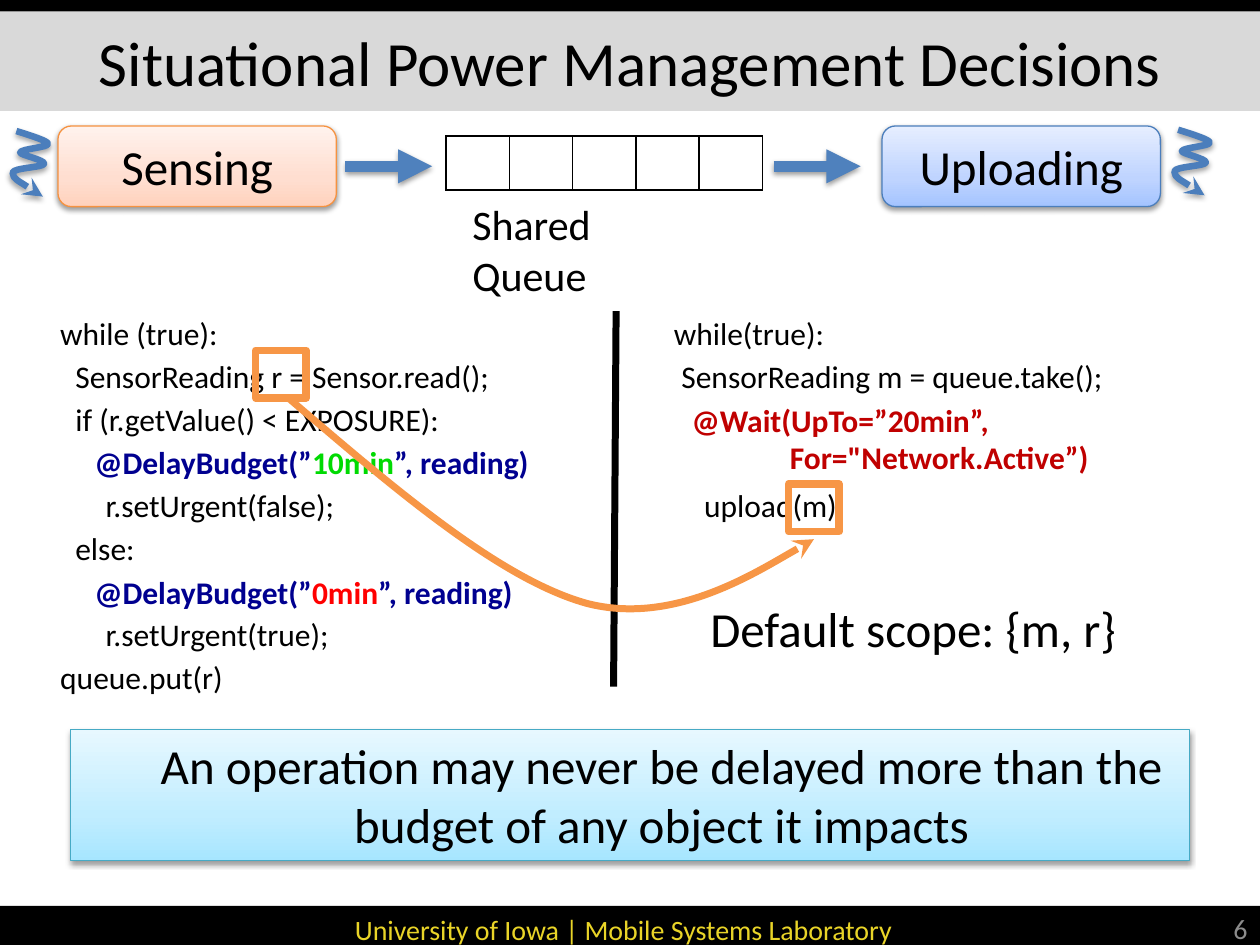
"""Builds the slide on situational power management decisions."""
from copy import deepcopy

from lxml.etree import SubElement
from pptx import Presentation
from pptx.dml.color import RGBColor
from pptx.enum.shapes import MSO_CONNECTOR, MSO_SHAPE as SHAPE
from pptx.enum.text import MSO_ANCHOR as ANCHOR, MSO_AUTO_SIZE, PP_ALIGN as ALIGN
from pptx.oxml.ns import qn
from pptx.util import Inches, Pt

BLACK = RGBColor(0x00, 0x00, 0x00)
WHITE = RGBColor(0xFF, 0xFF, 0xFF)
LIGHT_GRAY = RGBColor(0xD9, 0xD9, 0xD9)
MID_GRAY = RGBColor(0x8C, 0x8C, 0x8C)
YELLOW = RGBColor(0xE9, 0xD4, 0x28)
NAVY = RGBColor(0x00, 0x00, 0x90)
GREEN = RGBColor(0x00, 0xDA, 0x02)
RED = RGBColor(0xFF, 0x00, 0x00)
DARK_RED = RGBColor(0xC0, 0x00, 0x00)
BLUE = RGBColor(0x4F, 0x81, 0xBD)
DEEP_BLUE = RGBColor(0x4B, 0x7E, 0xBC)
ORANGE = RGBColor(0xF7, 0x96, 0x46)
ORANGE_EDGE = RGBColor(0xF6, 0x92, 0x40)
TEAL_EDGE = RGBColor(0x46, 0xAA, 0xC5)
PEACH = [RGBColor(0xFF, 0xD2, 0xBD), RGBColor(0xFF, 0xDE, 0xD0), RGBColor(0xFF, 0xF2, 0xED)]
PERIWINKLE = [RGBColor(0xA4, 0xC4, 0xFF), RGBColor(0xBF, 0xD4, 0xFF), RGBColor(0xE6, 0xEE, 0xFF)]
SKY = [RGBColor(0xA7, 0xE6, 0xFF), RGBColor(0xC1, 0xED, 0xFF), RGBColor(0xE7, 0xF8, 0xFF)]

FONT = "Calibri"
SPACE_WIDTH = 0.06
CODE_LINE = 24.5
STOPS = (0, 0.35, 1)

TITLE = "Situational Power Management Decisions"
FOOTER = "University of Iowa | Mobile Systems Laboratory"
RULE = "An operation may never be delayed more than the budget of any object it impacts"
STAGES = [("Sensing", 0.46, PEACH, ORANGE_EDGE), ("Uploading", 7, PERIWINKLE, DEEP_BLUE)]
QUEUE_SLOTS = 5
FLOW_ARROWS = [2.74, 6.14]
# code line, indent in characters, annotation lines above it
SENSING_CODE = [
    ("while (true):", 0, 0),
    ("SensorReading r = Sensor.read();", 2, 0),
    ("if (r.getValue() < EXPOSURE):", 2, 0),
    ("r.setUrgent(false);", 6, 1),
    ("else:", 2, 0),
    ("r.setUrgent(true);", 6, 1),
    ("queue.put(r)", 0, 0),
]
UPLOADING_CODE = [
    ("while(true):", 0, 0),
    ("SensorReading m = queue.take();", 1, 0),
    ("upload(m)", 4, 2),
]
WAIT = [("@Wait(UpTo=”20min”,", 0), ("For=\"Network.Active”)", 13)]
BUDGETS = [("10min", GREEN, 3.47), ("0min", RED, 4.5)]
HIGHLIGHTS = [(6.26, 3.84), (2.03, 2.78)]
SQUIGGLE = [(0.13, 1.04), (0.26, 1.08), (0.38, 1.12), (0.38, 1.14),
            (0.39, 1.17), (0.17, 1.18), (0.16, 1.21),
            (0.16, 1.23), (0.36, 1.27), (0.35, 1.3),
            (0.34, 1.33), (0.11, 1.33), (0.1, 1.37),
            (0.1, 1.42), (0.34, 1.56), (0.34, 1.56)]
SQUIGGLE_SHIFTS = [(0, 0), (9.22, -0.01)]
OBJECT_FLOW = [(2.29, 3.16), (3.13, 3.88), (3.97, 4.6), (4.66, 4.79),
               (5.36, 4.97), (6.46, 4.28), (6.46, 4.28)]


def write(shape, paragraphs, size=18, color=BLACK, bold=False, align=ALIGN.LEFT,
          anchor=ANCHOR.TOP, wrap=True, after=0, right=0.1):
    """Fill a shape with (runs, indent, space before) paragraphs."""
    frame = shape.text_frame
    frame.auto_size = MSO_AUTO_SIZE.NONE
    frame.word_wrap, frame.vertical_anchor = wrap, anchor
    frame.margin_right = Inches(right)
    for number, (runs, indent, before) in enumerate(paragraphs):
        paragraph = frame.add_paragraph() if number else frame.paragraphs[0]
        paragraph.alignment = align
        paragraph.space_before, paragraph.space_after = Pt(before), Pt(after)
        if indent:
            paragraph._p.get_or_add_pPr().set("marL", str(Inches(indent)))
        for words, run_color in [(runs, color)] if isinstance(runs, str) else runs:
            run = paragraph.add_run()
            run.text = words
            run.font.name, run.font.size, run.font.bold = FONT, Pt(size), bold
            run.font.color.rgb = run_color
    return shape


def add_text(slide, paragraphs, at, **style):
    return write(slide.shapes.add_textbox(*map(Inches, at)), paragraphs, **style)


def add_shadow(spPr, opacity=38, distance=1.6):
    effects = spPr.find(qn("a:effectLst"))
    shadow = SubElement(effects, qn("a:outerShdw"), blurRad=str(Pt(3.1)),
                        dist=str(Pt(distance)), dir="5400000", rotWithShape="0")
    tint = SubElement(shadow, qn("a:srgbClr"), val="000000")
    SubElement(tint, qn("a:alpha"), val=str(opacity * 1000))


def add_box(slide, at, kind=SHAPE.RECTANGLE, fill=None, edge=None, width=0.75):
    box = slide.shapes.add_shape(kind, *map(Inches, at))
    box.shadow.inherit = False
    if isinstance(fill, list):
        box.fill.gradient()
        box.fill.gradient_angle = 90
        stop_list = box._element.spPr.find(".//" + qn("a:gsLst"))
        stop_list.append(deepcopy(stop_list[-1]))
        for stop, place, color in zip(box.fill.gradient_stops, STOPS, fill):
            stop.position, stop.color.rgb = place, color
        add_shadow(box._element.spPr)
    elif fill is None:
        box.fill.background()
    else:
        box.fill.solid()
        box.fill.fore_color.rgb = fill
    if edge is None:
        box.line.fill.background()
    else:
        box.line.color.rgb, box.line.width = edge, Pt(width)
    return box


def style_line(line, color, width, head=None):
    line.color.rgb, line.width = color, Pt(width)
    if head:
        SubElement(line._get_or_add_ln(), qn("a:tailEnd"), type=head)


def add_line(slide, start, end, color, width, head=None):
    line = slide.shapes.add_connector(MSO_CONNECTOR.STRAIGHT, *map(Inches, (*start, *end)))
    style_line(line.line, color, width, head)
    SubElement(line._element.spPr, qn("a:effectLst"))
    return line


def add_curve(slide, points, color, width):
    """Draw a chain of cubic curves with an arrowhead at its end."""
    points = [(Inches(x), Inches(y)) for x, y in points]
    builder = slide.shapes.build_freeform(*points[0])
    builder.add_line_segments(points[3::3], close=False)
    curve = builder.convert_to_shape()
    segments = list(curve._element.iter(qn("a:lnTo")))
    for number, segment in enumerate(segments):
        segment.tag = qn("a:cubicBezTo")
        segment.remove(segment[0])
        for x, y in points[3 * number + 1:3 * number + 4]:
            SubElement(segment, qn("a:pt"), x=str(x - curve.left), y=str(y - curve.top))
    curve.shadow.inherit = False
    curve.fill.background()
    style_line(curve.line, color, width, "stealth")
    return curve


def add_queue(slide):
    at = map(Inches, (3.54, 1.08, 2.51, 0.43))
    queue = slide.shapes.add_table(1, QUEUE_SLOTS, *at).table
    queue.first_row = queue.horz_banding = False
    for slot in queue.iter_cells():
        for side in ("a:lnL", "a:lnR", "a:lnT", "a:lnB"):
            border = SubElement(slot._tc.get_or_add_tcPr(), qn(side), w=str(Pt(1)))
            SubElement(SubElement(border, qn("a:solidFill")), qn("a:srgbClr"), val=str(BLACK))
        slot.fill.background()


def add_code(slide, code, at):
    lines = [(words, indent * SPACE_WIDTH, gap * CODE_LINE) for words, indent, gap in code]
    add_text(slide, lines, at, after=3)


def main():
    deck = Presentation()
    deck.slide_width, deck.slide_height = Inches(10), Inches(7.5)
    slide = deck.slides.add_slide(deck.slide_layouts[5])

    title = slide.shapes.title
    title.left, title.top, title.width, title.height = map(Inches, (0, 0.09, 10, 0.79))
    title.fill.solid()
    title.fill.fore_color.rgb = LIGHT_GRAY
    write(title, [(TITLE, 0, 0)], size=36, align=ALIGN.CENTER, anchor=ANCHOR.MIDDLE)

    add_box(slide, (0, -0.01, 10, 0.1), fill=BLACK)
    write(add_box(slide, (0, 7.19, 10, 0.37), fill=BLACK), [(FOOTER, 0, 0)],
          size=16, color=YELLOW, align=ALIGN.CENTER, right=0.2)
    add_text(slide, [("6", 0, 0)], (9.03, 7.19, 0.97, 0.36), size=16, color=MID_GRAY,
             align=ALIGN.RIGHT, anchor=ANCHOR.MIDDLE)

    add_queue(slide)
    add_code(slide, SENSING_CODE, (0.38, 2.44, 5, 3.16))
    add_code(slide, UPLOADING_CODE, (5.25, 2.44, 4.5, 1.78))
    add_text(slide, [(words, 0.5 + indent * SPACE_WIDTH, 0) for words, indent in WAIT],
             (4.89, 3.13, 5, 0.71), color=DARK_RED, bold=True)

    for name, left, fill, edge in STAGES:
        stage = add_box(slide, (left, 1, 2.21, 0.64), SHAPE.ROUNDED_RECTANGLE, fill, edge)
        write(stage, [(name, 0, 0)], size=28, align=ALIGN.CENTER, anchor=ANCHOR.MIDDLE)
    write(add_box(slide, (3.65, 1.53, 2.11, 0.28), fill=WHITE), [("Shared Queue", 0, 0)],
          size=24, right=0.8)
    for left in FLOW_ARROWS:
        arrow = add_line(slide, (left, 1.32), (left + 0.69, 1.32), BLUE, 6.5, "triangle")
        add_shadow(arrow._element.spPr)
    for dx, dy in SQUIGGLE_SHIFTS:
        squiggle = add_curve(slide, [(x + dx, y + dy) for x, y in SQUIGGLE], DEEP_BLUE, 3.75)
        add_shadow(squiggle._element.spPr, opacity=35, distance=1.8)

    add_line(slide, (4.89, 2.47), (4.87, 5.45), BLACK, 4)
    for delay, color, top in BUDGETS:
        runs = [("@DelayBudget(”", NAVY), (delay, color), ("”, reading)", NAVY)]
        add_text(slide, [(runs, 0.5, 0)], (0.15, top, 4.36, 0.4), bold=True, wrap=False)
    write(add_box(slide, (0.56, 5.79, 8.88, 1.04), fill=SKY, edge=TEAL_EDGE),
          [(RULE, 0.5, 0)], size=28, align=ALIGN.CENTER)
    add_text(slide, [("Default scope: {m, r}", 0, 0)], (5.54, 4.7, 3.46, 0.57),
             size=28, wrap=False)
    for left, top in HIGHLIGHTS:
        add_box(slide, (left, top, 0.4, 0.38), edge=ORANGE, width=4.25)
    add_curve(slide, OBJECT_FLOW, ORANGE, 4)
    deck.save("out.pptx")


if __name__ == "__main__":
    main()
